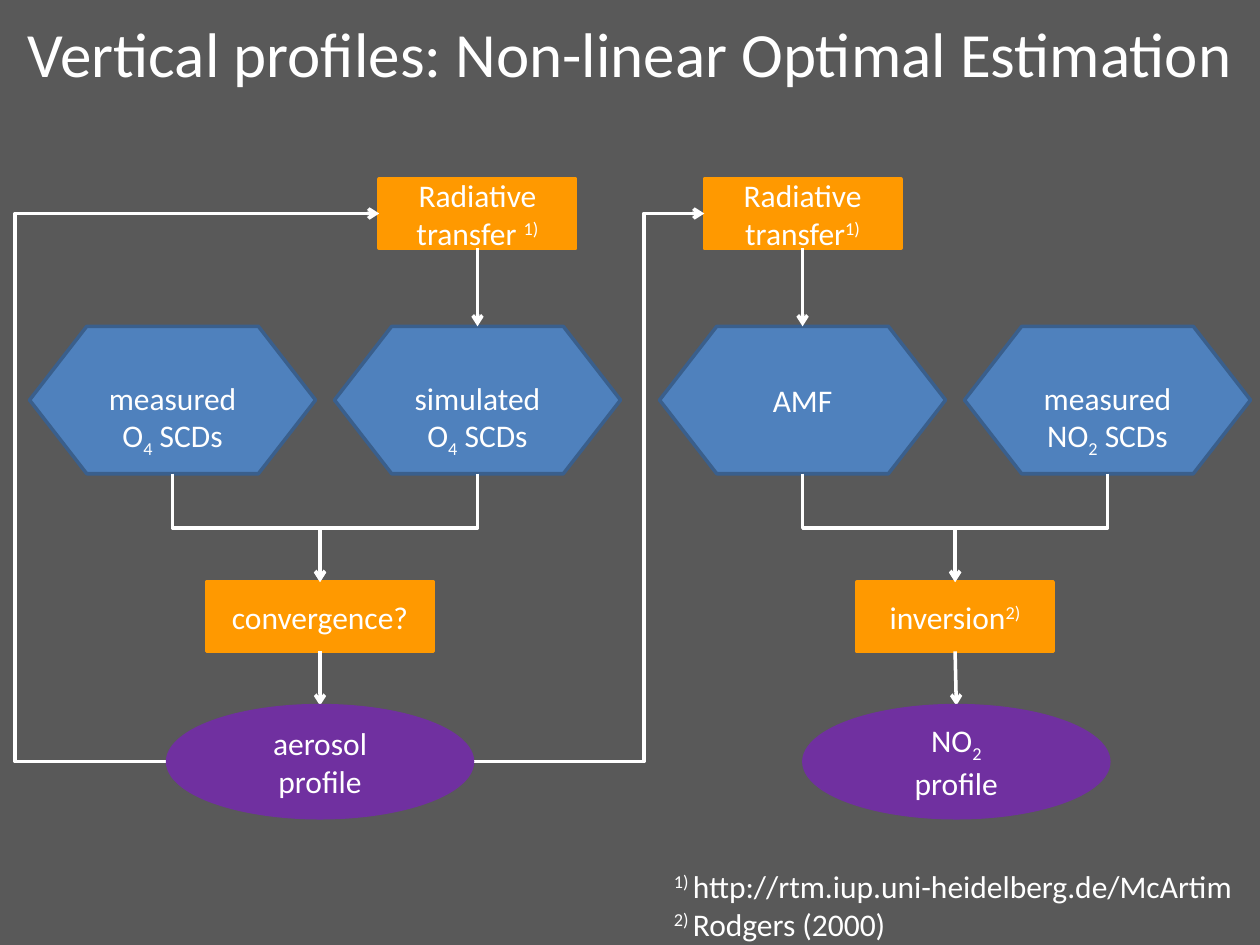
from dataclasses import dataclass

from lxml import etree
from pptx import Presentation
from pptx.dml.color import RGBColor
from pptx.enum.shapes import MSO_CONNECTOR, MSO_SHAPE
from pptx.enum.text import MSO_ANCHOR, PP_ALIGN
from pptx.oxml.ns import qn
from pptx.util import Inches, Pt

GREY = RGBColor(0x59, 0x59, 0x59)
WHITE = RGBColor(0xFF, 0xFF, 0xFF)
BLUE = RGBColor(0x4F, 0x81, 0xBD)
DARK_BLUE = RGBColor(0x3A, 0x5F, 0x8C)
ORANGE = RGBColor(0xFF, 0x99, 0x00)
PURPLE = RGBColor(0x70, 0x30, 0xA0)

HEXAGON = MSO_SHAPE.FLOWCHART_PREPARATION
PROCESS = MSO_SHAPE.FLOWCHART_PROCESS
OVAL = MSO_SHAPE.FLOWCHART_CONNECTOR
STRAIGHT, ELBOW = MSO_CONNECTOR.STRAIGHT, MSO_CONNECTOR.ELBOW
CENTER, LEFT = PP_ALIGN.CENTER, PP_ALIGN.LEFT
MIDDLE, TOP = MSO_ANCHOR.MIDDLE, MSO_ANCHOR.TOP

FONT = "Calibri"
LINE_WIDTH = Pt(2)
SUB, SUPER = -25000, 30000

Run = tuple[str, int]  # text, baseline shift
Point = tuple[float, float]


@dataclass(frozen=True)
class Style:
    shape: int
    fill: RGBColor
    line: RGBColor
    height: float


@dataclass(frozen=True)
class Node:
    style: Style
    x: float  # centre
    top: float
    width: float
    paragraphs: list[list[Run]]
    inset_top: float = 0.05

    @property
    def bottom(self) -> float:
        return self.top + self.style.height

    @property
    def mid_y(self) -> float:
        return self.top + self.style.height / 2


DATA = Style(HEXAGON, BLUE, DARK_BLUE, 1.17)
STEP = Style(PROCESS, ORANGE, ORANGE, 0.55)
RESULT = Style(OVAL, PURPLE, PURPLE, 0.89)

# Columns and rows
O4_MEASURED_X, O4_SIMULATED_X, AMF_X, NO2_MEASURED_X = 1.37, 3.79, 6.37, 8.79
AEROSOL_X, NO2_X = 2.54, 7.58
MODEL_Y, DATA_Y, SOLVE_Y, RESULT_Y = 1.42, 2.59, 4.62, 5.6


def scd_node(x: float, kind: str, gas: str, count: str) -> Node:
    runs = [(f"{kind} {gas}", 0), (count, SUB), (" SCDs", 0)]
    return Node(DATA, x, DATA_Y, 2.27, [runs], inset_top=0.35)


o4_measured = scd_node(O4_MEASURED_X, "measured", "O", "4")
o4_simulated = scd_node(O4_SIMULATED_X, "simulated", "O", "4")
amf = Node(DATA, AMF_X, DATA_Y, 2.27, [[("AMF", 0)]])
no2_measured = scd_node(NO2_MEASURED_X, "measured", "NO", "2")
o4_model = Node(STEP, O4_SIMULATED_X, MODEL_Y, 1.56,
                [[("Radiative transfer ", 0), ("1)", SUPER)]])
amf_model = Node(STEP, AMF_X, MODEL_Y, 1.56,
                 [[("Radiative transfer", 0), ("1)", SUPER)]])
convergence = Node(STEP, AEROSOL_X, SOLVE_Y, 1.8, [[("convergence?", 0)]])
inversion = Node(STEP, NO2_X, SOLVE_Y, 1.56,
                 [[("inversion", 0), ("2)", SUPER)]])
aerosol = Node(RESULT, AEROSOL_X, RESULT_Y, 2.42,
               [[("aerosol", 0)], [("profile", 0)]])
no2 = Node(RESULT, NO2_X + 0.01, RESULT_Y, 2.42,
           [[("NO", 0), ("2", SUB)], [("profile", 0)]])


def write(tf, paragraphs: list[list[Run]], size: int, align, anchor) -> None:
    tf.vertical_anchor = anchor
    for i, runs in enumerate(paragraphs):
        p = tf.paragraphs[0] if i == 0 else tf.add_paragraph()
        p.alignment = align
        for text, baseline in runs:
            r = p.add_run()
            r.text = text
            r.font.name = FONT
            r.font.size = Pt(size)
            r.font.color.rgb = WHITE
            if baseline:
                r.font._element.set("baseline", str(baseline))


def add_text(slide, left: float, top: float, width: float, height: float,
             paragraphs: list[list[Run]], size: int, align, anchor,
             wrap: bool) -> None:
    box = slide.shapes.add_textbox(Inches(left), Inches(top),
                                   Inches(width), Inches(height))
    box.text_frame.word_wrap = wrap
    write(box.text_frame, paragraphs, size, align, anchor)


def add_node(slide, node: Node) -> None:
    style = node.style
    sp = slide.shapes.add_shape(
        style.shape, Inches(node.x - node.width / 2), Inches(node.top),
        Inches(node.width), Inches(style.height))
    sp.shadow.inherit = False
    sp.fill.solid()
    sp.fill.fore_color.rgb = style.fill
    sp.line.color.rgb = style.line
    sp.line.width = LINE_WIDTH
    sp.text_frame.word_wrap = True
    sp.text_frame.margin_top = Inches(node.inset_top)
    write(sp.text_frame, node.paragraphs, 18, CENTER, MIDDLE)


def add_arrow(slide, kind, start: Point, end: Point):
    c = slide.shapes.add_connector(kind, *map(Inches, start + end))
    c.line.color.rgb = WHITE
    c.line.width = LINE_WIDTH
    etree.SubElement(c.line._get_or_add_ln(), qn("a:tailEnd"), type="arrow")
    etree.SubElement(c._element.spPr, qn("a:effectLst"))
    return c


def add_down_arrow(slide, source: Node, target: Node) -> None:
    add_arrow(slide, STRAIGHT, (source.x, source.bottom),
              (target.x, target.top))


def add_merge_arrow(slide, source: Node, target: Node) -> None:
    """Elbow that leaves downwards: a horizontal elbow turned by 90 degrees."""
    dx, dy = target.x - source.x, target.top - source.bottom
    cx, cy = source.x + dx / 2, source.bottom + dy / 2
    half = dy / 2 if dx < 0 else -dy / 2
    c = add_arrow(slide, ELBOW, (cx - half, cy - abs(dx) / 2),
                  (cx + half, cy + abs(dx) / 2))
    angle = 90 if dx < 0 else 270
    c._element.spPr.find(qn("a:xfrm")).set("rot", str(angle * 60000))


def add_side_arrow(slide, start: Point, end: Point, bend_x: float) -> None:
    c = add_arrow(slide, ELBOW, start, end)
    bend = round((bend_x - start[0]) / (end[0] - start[0]) * 100000)
    geometry = c._element.spPr.find(qn("a:prstGeom"))
    guides = geometry.find(qn("a:avLst"))
    if guides is None:
        guides = etree.SubElement(geometry, qn("a:avLst"))
    etree.SubElement(guides, qn("a:gd"), name="adj1", fmla=f"val {bend}")


def main() -> None:
    prs = Presentation()
    prs.slide_width, prs.slide_height = Inches(10), Inches(7.5)
    slide = prs.slides.add_slide(prs.slide_layouts[6])
    slide.background.fill.solid()
    slide.background.fill.fore_color.rgb = GREY

    # Title
    add_text(slide, 0, 0, 10, 0.83,
             [[("Vertical profiles: Non-linear Optimal Estimation", 0)]],
             36, CENTER, MIDDLE, True)

    # Inputs and processing steps
    for node in (o4_simulated, o4_model, inversion, o4_measured, convergence,
                 amf, no2_measured, amf_model):
        add_node(slide, node)

    # Arrows
    for source, target in ((o4_model, o4_simulated), (amf_model, amf),
                           (convergence, aerosol), (inversion, no2)):
        add_down_arrow(slide, source, target)
    for source, target in ((o4_measured, convergence),
                           (o4_simulated, convergence),
                           (no2_measured, inversion), (amf, inversion)):
        add_merge_arrow(slide, source, target)
    for side, target, bend_x in ((1, amf_model, 5.11), (-1, o4_model, 0.12)):
        add_side_arrow(slide,
                       (aerosol.x + side * aerosol.width / 2, aerosol.mid_y),
                       (target.x - target.width / 2, target.mid_y), bend_x)

    # Resulting profiles
    for node in (no2, aerosol):
        add_node(slide, node)

    # References
    add_text(slide, 5.25, 6.83, 4.81, 0.71,
             [[("1) ", SUPER), ("http://rtm.iup.uni-heidelberg.de/McArtim", 0)],
              [("2) ", SUPER), ("Rodgers (2000)", 0)]],
             18, LEFT, TOP, False)

    prs.save("out.pptx")


if __name__ == "__main__":
    main()
